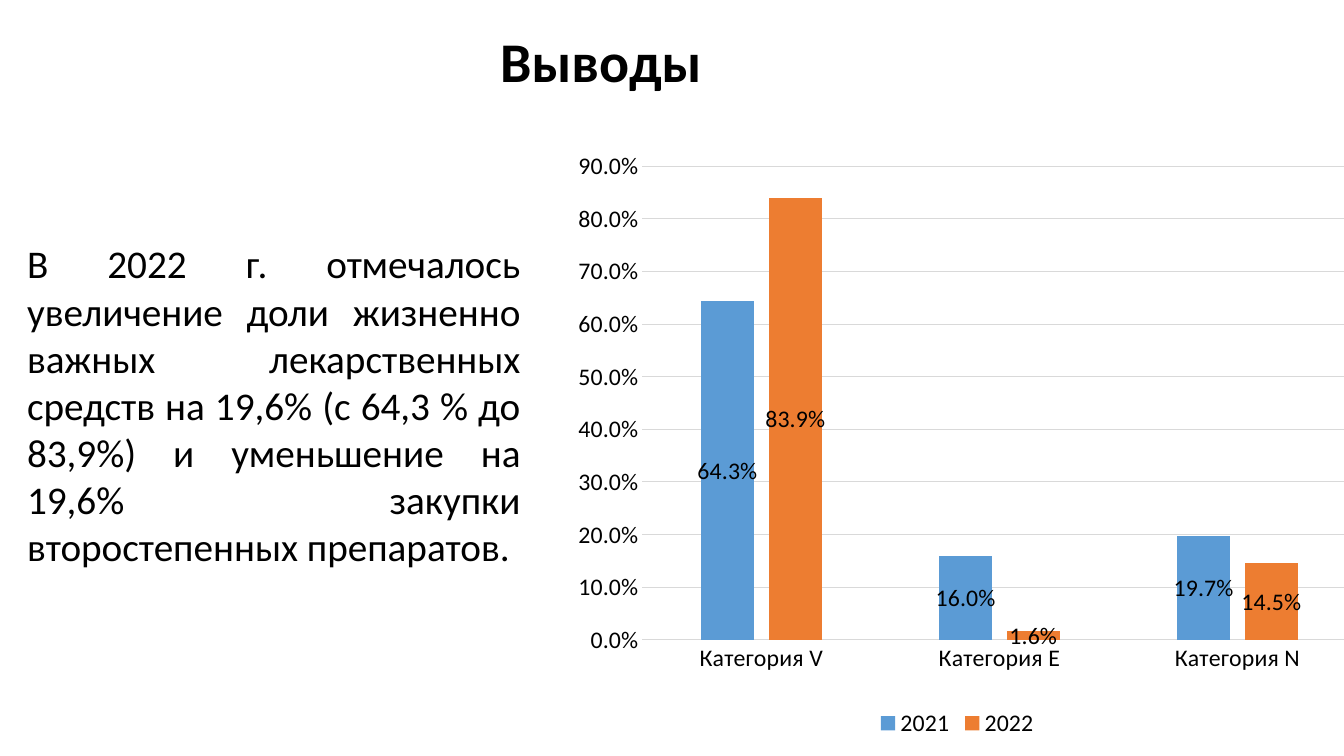
import dataclasses

import lxml.etree
import pptx
import pptx.chart.data
import pptx.dml.color
import pptx.enum.chart
import pptx.enum.text
import pptx.oxml
import pptx.oxml.ns
import pptx.slide
import pptx.util

COLORS = {"text": "000000", "grid": "D9D9D9", "2021": "5B9BD5", "2022": "ED7D31"}
FONT_NAME = "Calibri"
PERCENT_FORMAT = "0.0%"
CATEGORIES = ("Категория V", "Категория E", "Категория N")
SHARES = {"2021": (0.643, 0.16, 0.197), "2022": (0.839, 0.016, 0.145)}
PLOT_LAYOUT = {"x": 0.112, "y": 0.037, "w": 0.88, "h": 0.791}


@dataclasses.dataclass(frozen=True)
class Box:
    left: float
    top: float
    width: float
    height: float

    def lengths(self) -> list[pptx.util.Length]:
        return [pptx.util.Inches(value) for value in dataclasses.astuple(self)]


@dataclasses.dataclass(frozen=True)
class TextBlock:
    box: Box
    text: str
    size: int
    alignment: pptx.enum.text.PP_ALIGN
    anchor: pptx.enum.text.MSO_ANCHOR
    bold: bool = False
    line_spacing: float = 1.0


TEXT_BLOCKS = (
    TextBlock(
        Box(4.63, 0.28, 2.66, 0.72),
        "Выводы",
        40,
        pptx.enum.text.PP_ALIGN.CENTER,
        pptx.enum.text.MSO_ANCHOR.MIDDLE,
        bold=True,
        line_spacing=0.9,
    ),
    TextBlock(
        Box(0.17, 2.33, 5.09, 3.87),
        "В 2022 г. отмечалось увеличение доли жизненно важных лекарственных "
        "средств на 19,6% (с 64,3 % до 83,9%) и уменьшение на 19,6% закупки "
        "второстепенных препаратов.",
        28,
        pptx.enum.text.PP_ALIGN.JUSTIFY,
        pptx.enum.text.MSO_ANCHOR.TOP,
    ),
)
CHART_BOX = Box(5.47, 1.43, 8.05, 5.94)


def color(name: str) -> pptx.dml.color.RGBColor:
    return pptx.dml.color.RGBColor.from_string(COLORS[name])


def style_font(font, size: int, bold: bool = False) -> None:
    font.name = FONT_NAME
    font.size = pptx.util.Pt(size)
    font.bold = bold
    font.color.rgb = color("text")


def style_line(line) -> None:
    line.color.rgb = color("grid")
    line.width = pptx.util.Pt(0.75)


def add_text(slide: pptx.slide.Slide, block: TextBlock) -> None:
    text_frame = slide.shapes.add_textbox(*block.box.lengths()).text_frame
    text_frame.word_wrap = True
    text_frame.vertical_anchor = block.anchor
    text_frame.text = block.text
    paragraph = text_frame.paragraphs[0]
    paragraph.alignment = block.alignment
    paragraph.line_spacing = block.line_spacing
    style_font(paragraph.runs[0].font, block.size, block.bold)


def set_plot_layout(chart) -> None:
    plot_area = chart.plots[0]._element.getparent()
    for layout in plot_area.findall(pptx.oxml.ns.qn("c:layout")):
        plot_area.remove(layout)
    layout = pptx.oxml.parse_xml(f"<c:layout {pptx.oxml.ns.nsdecls('c')}/>")
    plot_area.insert(0, layout)
    manual = lxml.etree.SubElement(layout, pptx.oxml.ns.qn("c:manualLayout"))
    settings = {"layoutTarget": "inner", "xMode": "edge", "yMode": "edge", **PLOT_LAYOUT}
    for name, value in settings.items():
        element = lxml.etree.SubElement(manual, pptx.oxml.ns.qn(f"c:{name}"))
        element.set("val", str(value))


def add_share_chart(slide: pptx.slide.Slide) -> None:
    chart_data = pptx.chart.data.CategoryChartData(number_format=PERCENT_FORMAT)
    chart_data.categories = CATEGORIES
    for year, shares in SHARES.items():
        chart_data.add_series(year, shares)
    chart = slide.shapes.add_chart(
        pptx.enum.chart.XL_CHART_TYPE.COLUMN_CLUSTERED, *CHART_BOX.lengths(), chart_data
    ).chart
    style_font(chart.font, 17)
    chart.has_title = False
    chart.has_legend = True
    chart.legend.position = pptx.enum.chart.XL_LEGEND_POSITION.BOTTOM
    chart.legend.include_in_layout = False

    for axis in (chart.category_axis, chart.value_axis):
        axis.major_tick_mark = pptx.enum.chart.XL_TICK_MARK.NONE
        axis.minor_tick_mark = pptx.enum.chart.XL_TICK_MARK.NONE
    style_line(chart.category_axis.format.line)
    value_axis = chart.value_axis
    value_axis.format.line.fill.background()
    value_axis.has_major_gridlines = True
    style_line(value_axis.major_gridlines.format.line)
    value_axis.minimum_scale = 0
    value_axis.maximum_scale = 0.9
    value_axis.major_unit = 0.1
    value_axis.tick_labels.number_format = PERCENT_FORMAT
    value_axis.tick_labels.number_format_is_linked = False

    plot = chart.plots[0]
    plot.gap_width = 219
    plot.overlap = -27
    plot.vary_by_categories = False
    for series in plot.series:
        series.format.fill.solid()
        series.format.fill.fore_color.rgb = color(series.name)
        series.invert_if_negative = False
        labels = series.data_labels
        labels.show_value = True
        labels.position = pptx.enum.chart.XL_LABEL_POSITION.CENTER
        labels.number_format = PERCENT_FORMAT
        labels.number_format_is_linked = False
        style_font(labels.font, 17)
    set_plot_layout(chart)


def main() -> None:
    presentation = pptx.Presentation()
    presentation.slide_width = pptx.util.Inches(13.33)
    presentation.slide_height = pptx.util.Inches(7.5)
    slide = presentation.slides.add_slide(presentation.slide_layouts[6])
    for block in TEXT_BLOCKS:
        add_text(slide, block)
    add_share_chart(slide)
    presentation.save("out.pptx")


if __name__ == "__main__":
    main()
